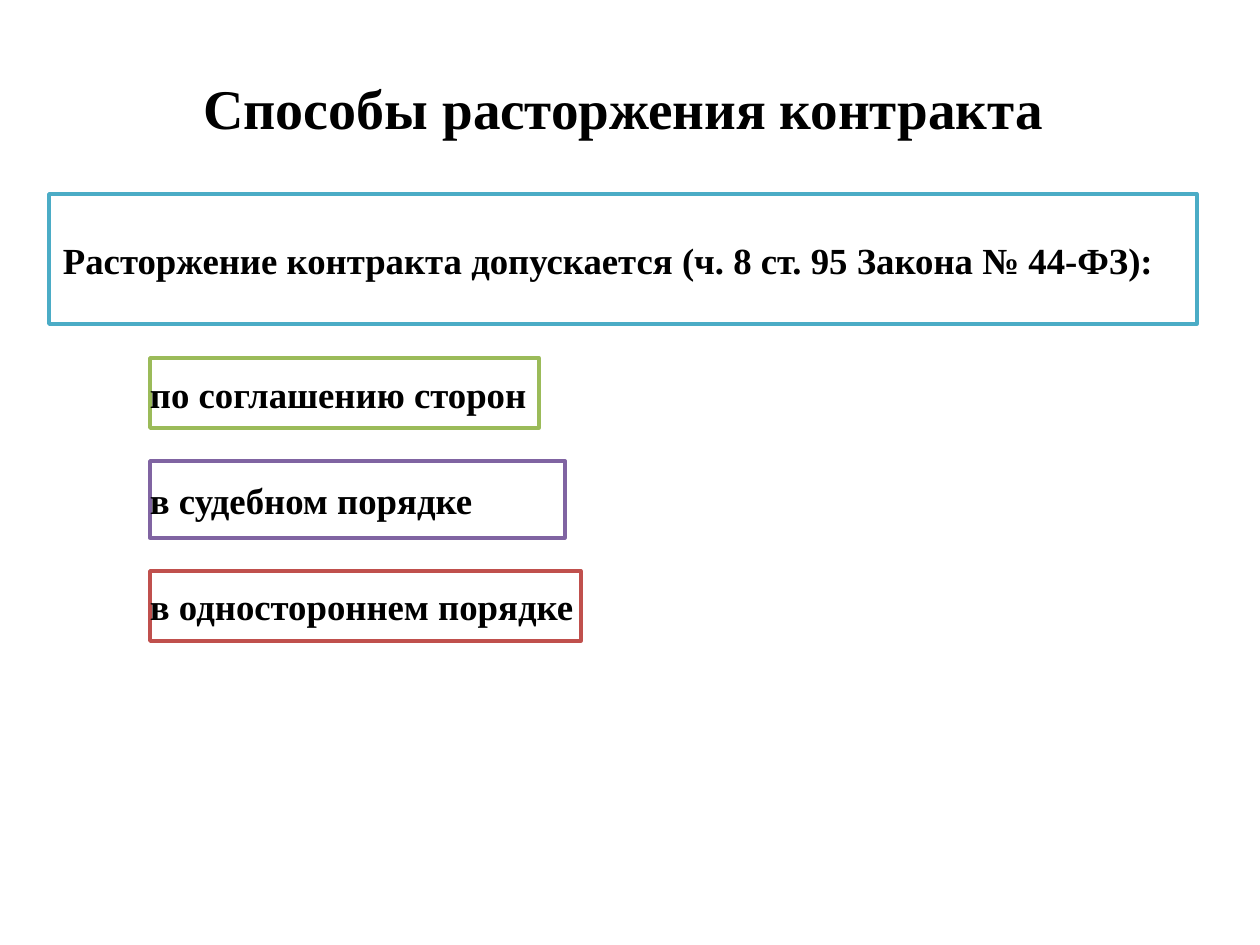
from dataclasses import dataclass

import pptx
import pptx.dml.color
import pptx.enum.shapes
import pptx.enum.text
import pptx.util

EMU_PER_PX = 914400 / 126


def px(length):
    return pptx.util.Emu(round(length * EMU_PER_PX))


def rgb(value):
    return pptx.dml.color.RGBColor.from_string(value)


@dataclass(frozen=True)
class Theme:
    font: str = "Times New Roman"
    ink: str = "000000"
    paper: str = "FFFFFF"
    aqua: str = "4BACC6"
    green: str = "9BBB59"
    purple: str = "8064A2"
    red: str = "C0504D"
    title_first_size: float = 32
    title_size: float = 31.5
    body_size: float = 21
    line_width: float = 2


class SlideBuilder:
    def __init__(self, page, theme):
        self.page = page
        self.theme = theme

    def prepare_frame(self, shape):
        """Clear the margins, centre the text vertically and return its first paragraph."""
        frame = shape.text_frame
        frame.margin_left = frame.margin_right = 0
        frame.margin_top = frame.margin_bottom = 0
        frame.word_wrap = True
        frame.auto_size = pptx.enum.text.MSO_AUTO_SIZE.NONE
        frame.vertical_anchor = pptx.enum.text.MSO_ANCHOR.MIDDLE
        return frame.paragraphs[0]

    def style_font(self, font, size):
        font.name = self.theme.font
        font.size = pptx.util.Pt(size)
        font.bold = True
        font.color.rgb = rgb(self.theme.ink)

    def title(self, left, top, width, height, spans):
        shape = self.page.shapes.title
        shape.left, shape.top = px(left), px(top)
        shape.width, shape.height = px(width), px(height)
        para = self.prepare_frame(shape)
        para.alignment = pptx.enum.text.PP_ALIGN.CENTER
        for text, size in spans:
            span = para.add_run()
            span.text = text
            self.style_font(span.font, size)

    def framed_text(self, left, top, width, height, text, color, leading,
                    align=pptx.enum.text.PP_ALIGN.LEFT, indent=0):
        box = self.page.shapes.add_shape(
            pptx.enum.shapes.MSO_SHAPE.RECTANGLE,
            px(left), px(top), px(width), px(height))
        box.shadow.inherit = False
        box.fill.solid()
        box.fill.fore_color.rgb = rgb(self.theme.paper)
        box.line.color.rgb = rgb(color)
        box.line.width = pptx.util.Pt(self.theme.line_width)
        para = self.prepare_frame(box)
        para.text = text
        para.alignment = align
        para.line_spacing = pptx.util.Pt(leading)
        if indent:
            para._p.get_or_add_pPr().set("marL", str(px(indent)))
        self.style_font(para.font, self.theme.body_size)


def main():
    theme = Theme()
    deck = pptx.Presentation()
    deck.slide_width, deck.slide_height = px(1260), px(945)
    page = deck.slides.add_slide(deck.slide_layouts.get_by_name("Title Only"))
    builder = SlideBuilder(page, theme)

    left, width = 49, 1148
    builder.title(left, 57, width, 101, [
        ("Способы", theme.title_first_size),
        (" расторжения контракта", theme.title_size),
    ])
    builder.framed_text(
        left, 194, width, 130,
        "Расторжение контракта допускается (ч. 8 ст. 95 Закона № 44-ФЗ):",
        theme.aqua, 25.7, pptx.enum.text.PP_ALIGN.JUSTIFY, indent=14)

    ways = [
        ("по соглашению сторон", 389, 70, theme.green, 25.7),
        ("в судебном порядке", 415, 77, theme.purple, 25.4),
        ("в одностороннем порядке", 431, 70, theme.red, 25.4),
    ]
    top, gap = 358, 33
    for text, way_width, height, color, leading in ways:
        builder.framed_text(150, top, way_width, height, text, color, leading)
        top += height + gap

    deck.save("out.pptx")


if __name__ == "__main__":
    main()
